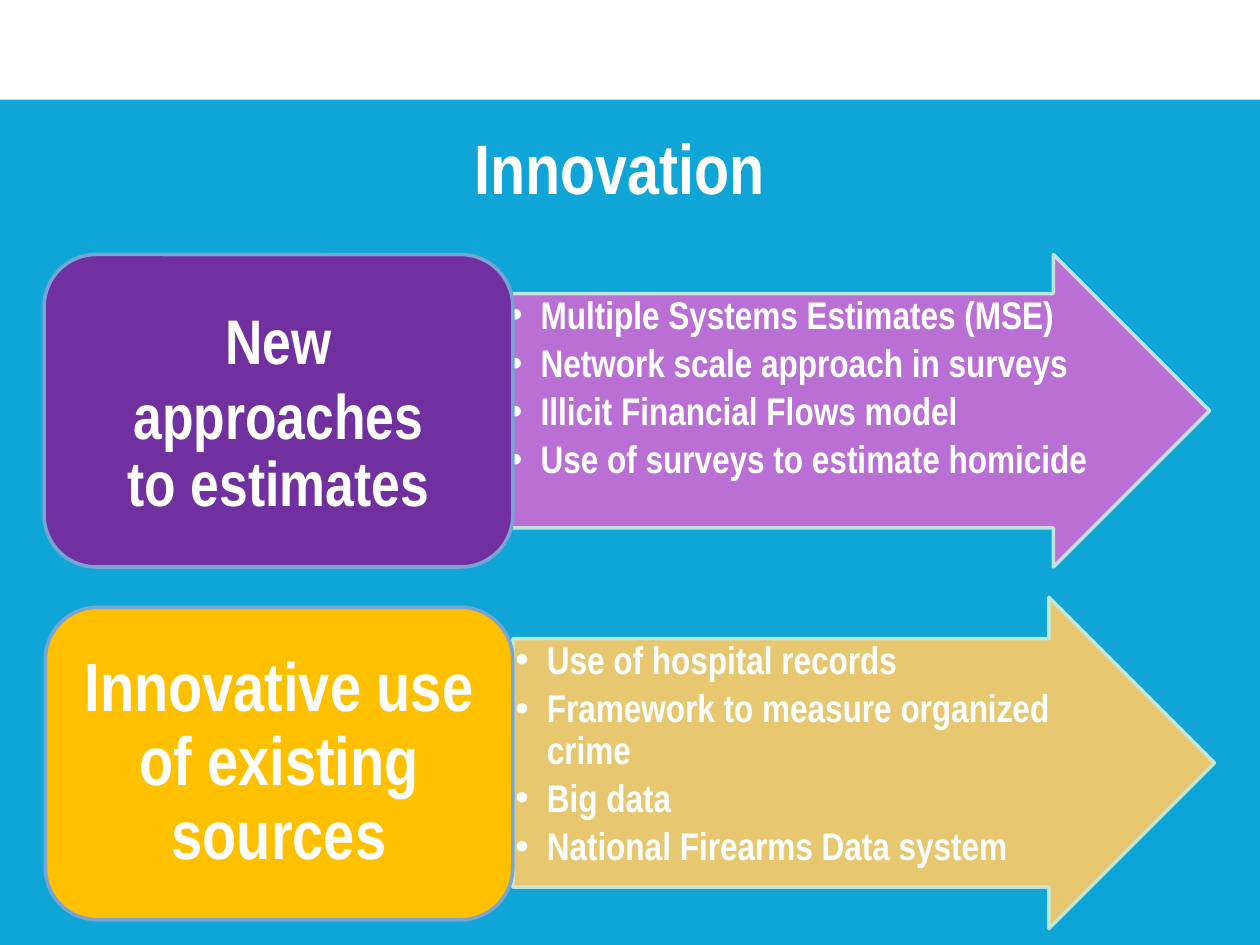
from dataclasses import dataclass

from lxml.etree import SubElement
from pptx import Presentation
from pptx.dml.color import RGBColor
from pptx.enum.shapes import MSO_SHAPE as Shape
from pptx.enum.text import MSO_ANCHOR as Anchor, PP_ALIGN as Align
from pptx.oxml.ns import qn
from pptx.util import Inches, Pt


@dataclass(frozen=True)
class Theme:
    font: str = "Arial Narrow"
    background: str = "0FA6D7"
    white: str = "FFFFFF"
    label_line: str = "77A5D5"
    arrow_line: str = "CCECDE"
    purple: str = "7030A0"
    orchid: str = "CC6AD4"
    amber: str = "FFC000"
    sand: str = "FFCC66"
    title_size: int = 40
    bullet_size: int = 22
    line_width: int = 2
    arrow_opacity: int = 90


THEME = Theme()


def set_fill(fill, color, opacity=100):
    fill.solid()
    fill.fore_color.rgb = RGBColor.from_string(color)
    if opacity < 100:
        for color_node in fill._xPr.iter(qn("a:srgbClr")):
            SubElement(color_node, qn("a:alpha"), val=str(opacity * 1000))


def add_block(page, kind, box, color, line=None, opacity=100):
    block = page.shapes.add_shape(kind, *map(Inches, box))
    block.shadow.inherit = False
    set_fill(block.fill, color, opacity)
    if line:
        block.line.width = Pt(THEME.line_width)
        set_fill(block.line.fill, line)
        if opacity < 100:
            for color_node in block.line._ln.iter(qn("a:srgbClr")):
                SubElement(color_node, qn("a:alpha"), val=str(opacity * 1000))
    else:
        block.line.fill.background()
    return block


def set_frame(frame, anchor, margins):
    left, top, right, bottom = map(Inches, margins)
    values = {
        "word_wrap": True,
        "vertical_anchor": anchor,
        "margin_left": left,
        "margin_top": top,
        "margin_right": right,
        "margin_bottom": bottom,
    }
    for name, value in values.items():
        setattr(frame, name, value)


def add_bullet(para):
    properties = para._p.get_or_add_pPr()
    properties.set("marL", str(Inches(0.25)))
    properties.set("indent", str(-Inches(0.25)))
    SubElement(properties, qn("a:buFont"), typeface="Arial")
    SubElement(properties, qn("a:buChar"), char="•")


def write_lines(frame, lines, size, align=Align.CENTER, bulleted=False):
    for index, (text, layout) in enumerate(lines):
        para = frame.paragraphs[0] if index == 0 else frame.add_paragraph()
        if bulleted:
            add_bullet(para)
        for name, value in {"alignment": align, **layout}.items():
            setattr(para, name, value)
        span = para.add_run()
        span.text = text
        values = {"name": THEME.font, "size": Pt(size), "bold": True}
        for name, value in values.items():
            setattr(span.font, name, value)
        span.font.color.rgb = RGBColor.from_string(THEME.white)


def add_title(page, box, text):
    title = page.shapes.add_textbox(*map(Inches, box))
    set_frame(title.text_frame, Anchor.MIDDLE, (0.1, 0.05, 0.1, 0.05))
    write_lines(title.text_frame, [(text, {})], THEME.title_size)


def add_arrow(page, box, color, items):
    arrow = add_block(page, Shape.RIGHT_ARROW, box, color,
                      THEME.arrow_line, THEME.arrow_opacity)
    arrow.adjustments[0] = 0.75
    arrow.adjustments[1] = 0.5
    set_frame(arrow.text_frame, Anchor.TOP, (0.02,) * 4)
    layout = {"line_spacing": 0.9, "space_after": Pt(3.8)}
    write_lines(arrow.text_frame, [(item, layout) for item in items],
                THEME.bullet_size, Align.LEFT, bulleted=True)


def add_label(page, box, color, lines, size, margins):
    label = add_block(page, Shape.ROUNDED_RECTANGLE, box, color, THEME.label_line)
    set_frame(label.text_frame, Anchor.MIDDLE, margins)
    write_lines(label.text_frame, lines, size)


def main():
    deck = Presentation()
    deck.slide_width, deck.slide_height = Inches(10), Inches(7.5)
    page = deck.slides.add_slide(deck.slide_layouts[6])
    set_fill(page.background.fill, THEME.background)
    add_block(page, Shape.RECTANGLE, (0, 0, 10, 0.79), THEME.white)
    add_title(page, (0.67, 0.52, 8.5, 1.61), "Innovation")

    tight = {"line_spacing": 0.9, "space_after": Pt(13)}
    add_arrow(page, (4.02, 2.02, 5.58, 2.48), THEME.orchid, [
        "Multiple Systems Estimates (MSE)",
        "Network scale approach in surveys",
        "Illicit Financial Flows model",
        "Use of surveys to estimate homicide",
    ])
    add_label(page, (0.35, 2.02, 3.72, 2.48), THEME.purple,
              [("New approaches", {}), ("to estimates", tight)],
              36, (0.15, 0.07, 0.15, 0.07))
    add_arrow(page, (4.07, 4.74, 5.57, 2.63), THEME.sand, [
        "Use of hospital records",
        "Framework to measure organized crime",
        "Big data",
        "National Firearms Data system",
    ])
    add_label(page, (0.36, 4.82, 3.71, 2.48), THEME.amber,
              [("Innovative use of existing sources", tight)],
              39, (0.16, 0.08, 0.16, 0.08))
    deck.save("out.pptx")


if __name__ == "__main__":
    main()
